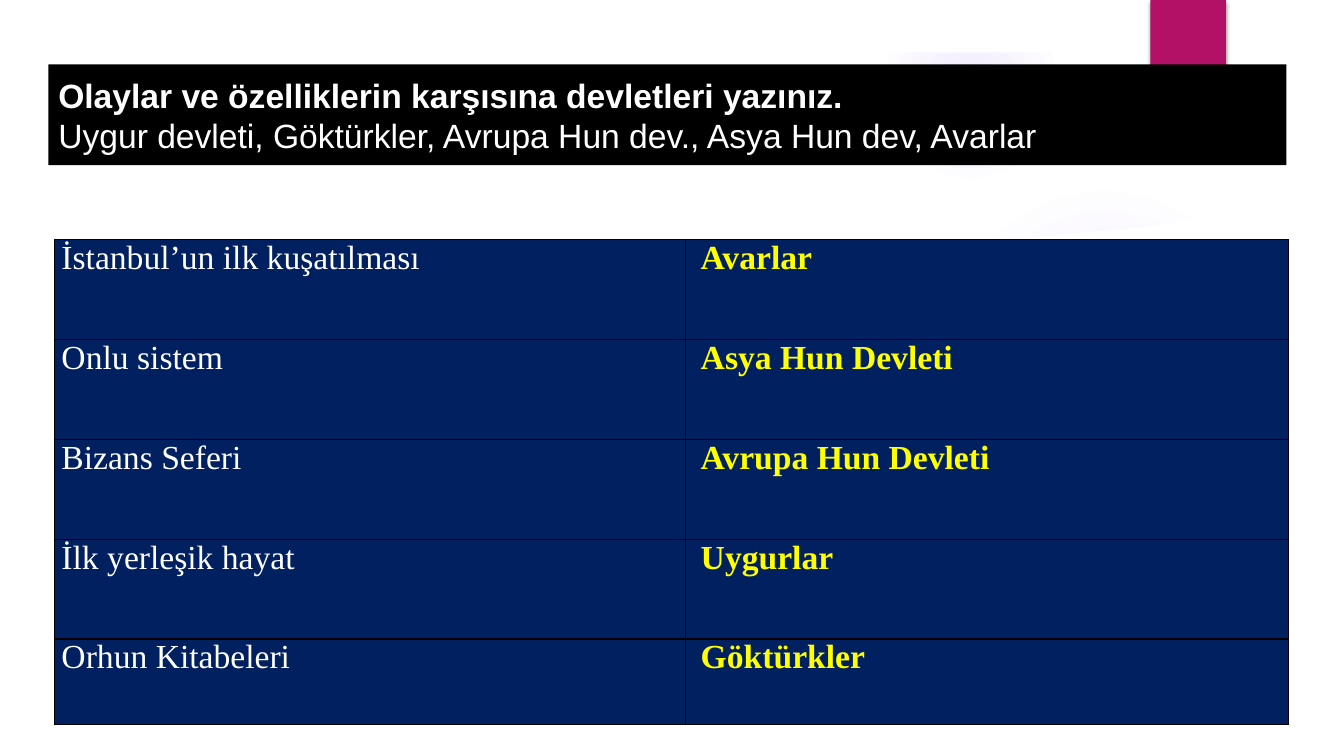
from lxml.etree import SubElement
from pptx import Presentation
from pptx.dml.color import RGBColor
from pptx.enum.shapes import MSO_SHAPE
from pptx.enum.text import MSO_ANCHOR, PP_ALIGN
from pptx.oxml import parse_xml
from pptx.oxml.ns import nsdecls, qn
from pptx.util import Inches, Pt

WHITE, BLACK, NAVY, YELLOW = "FFFFFF", "000000", "002060", "FFFF00"
MAGENTA, VIOLET = "B31166", "9B6BF2"
GLOWS = [
    ((9.41, 1.83, 3.08, 3.08), [(0, 7), (36, 6), (69, 0)]),
    ((8.75, 0.01, 1.75, 1.75), [(0, 14), (36, 7), (73, 0)]),
]
PANEL_EDGE = [(12.84, 2.04), (12, 2.17), (11.16, 2.27), (10.32, 2.35), (9.49, 2.41),
              (8.4, 2.46), (7.08, 2.48), (5.83, 2.46), (4.44, 2.41), (3.21, 2.33),
              (2.16, 2.24), (1.35, 2.15), (0.5, 2.04)]
TITLE_LINES = [
    ("Olaylar ve özelliklerin karşısına devletleri yazınız.", True),
    ("Uygur devleti, Göktürkler, Avrupa Hun dev., Asya Hun dev, Avarlar", False),
]
ANSWERS = [
    ("İstanbul’un ilk kuşatılması", "Avarlar"),
    ("Onlu sistem", "Asya Hun Devleti"),
    ("Bizans Seferi", "Avrupa Hun Devleti"),
    ("İlk yerleşik hayat", "Uygurlar"),
    ("Orhun Kitabeleri", "Göktürkler"),
]


def color(value):
    return RGBColor.from_string(value)


def paint(shape, fill):
    shape.shadow.inherit = False
    shape.line.fill.background()
    shape.fill.solid()
    shape.fill.fore_color.rgb = color(fill)
    return shape


def add_block(page, kind, box, fill):
    return paint(page.shapes.add_shape(kind, *map(Inches, box)), fill)


def style(paragraph, name, fill, bold):
    paragraph.alignment = PP_ALIGN.LEFT
    paragraph.font.name = name
    paragraph.font.size = Pt(24)
    paragraph.font.bold = bold
    paragraph.font.color.rgb = color(fill)


def add_glow(page, box, stops):
    glow = add_block(page, MSO_SHAPE.OVAL, box, VIOLET)
    marks = "".join(
        f'<a:gs pos="{place * 1000}"><a:srgbClr val="{VIOLET}">'
        f'<a:alpha val="{alpha * 1000}"/></a:srgbClr></a:gs>'
        for place, alpha in stops)
    gradient = parse_xml(
        f'<a:gradFill {nsdecls("a")}><a:gsLst>{marks}</a:gsLst><a:path path="circle">'
        '<a:fillToRect l="50000" t="50000" r="50000" b="50000"/></a:path></a:gradFill>')
    properties = glow._element.spPr
    properties.replace(properties.find(qn("a:solidFill")), gradient)


def add_backdrop(page, width):
    for box, stops in GLOWS:
        add_glow(page, box, stops)
    outline = page.shapes.build_freeform(Inches(0.5), Inches(7), scale=1.0)
    corners = [(12.84, 7)] + PANEL_EDGE
    outline.add_line_segments([(Inches(x), Inches(y)) for x, y in corners])
    paint(outline.convert_to_shape(), WHITE)
    add_block(page, MSO_SHAPE.RECTANGLE, (0, 0, width, 0.52), WHITE)


def add_ribbon(page, box):
    ribbon = add_block(page, MSO_SHAPE.RECTANGLE, box, MAGENTA)
    effects = ribbon._element.spPr.find(qn("a:effectLst"))
    shadow = SubElement(effects, qn("a:outerShdw"), blurRad=str(Pt(3)), dist=str(Pt(2)),
                        dir="5400000", rotWithShape="0")
    tone = SubElement(shadow, qn("a:srgbClr"), val=BLACK)
    SubElement(tone, qn("a:alpha"), val="45000")


def add_title(page, box):
    frame = add_block(page, MSO_SHAPE.RECTANGLE, box, BLACK).text_frame
    frame.word_wrap = True
    frame.vertical_anchor = MSO_ANCHOR.MIDDLE
    for index, (text, bold) in enumerate(TITLE_LINES):
        paragraph = frame.add_paragraph() if index else frame.paragraphs[0]
        paragraph.text = text
        style(paragraph, "Arial", WHITE, bold)


def fill_cell(cell, text, ink, bold, indent):
    cell.margin_left, cell.margin_right = Inches(indent), Inches(0.07)
    cell.margin_top = cell.margin_bottom = 0
    cell.text = text
    style(cell.text_frame.paragraphs[0], "Times New Roman", ink, bold)
    properties = cell._tc.get_or_add_tcPr()
    for side in ("lnL", "lnR", "lnT", "lnB"):
        properties.append(parse_xml(
            f'<a:{side} {nsdecls("a")} w="{Pt(1)}"><a:solidFill>'
            f'<a:srgbClr val="{BLACK}"/></a:solidFill></a:{side}>'))
    cell.fill.solid()
    cell.fill.fore_color.rgb = color(NAVY)


def add_answers(page, box):
    table = page.shapes.add_table(len(ANSWERS), 2, *map(Inches, box)).table
    table.first_row = table.horz_banding = False
    for column, width in zip(table.columns, (6.26, 5.98)):
        column.width = Inches(width)
    for index, (event, state) in enumerate(ANSWERS):
        table.rows[index].height = Inches(0.85 if index == len(ANSWERS) - 1 else 0.99)
        fill_cell(table.cell(index, 0), event, WHITE, False, 0.07)
        fill_cell(table.cell(index, 1), state, YELLOW, True, 0.15)


def main():
    deck = Presentation()
    deck.slide_width, deck.slide_height = Inches(13.33), Inches(7.5)
    page = deck.slides.add_slide(deck.slide_layouts[6])
    add_backdrop(page, 13.33)
    add_ribbon(page, (11.41, 0, 0.75, 1.25))
    add_title(page, (0.48, 0.64, 12.28, 1))
    add_answers(page, (0.54, 2.38, 12.24, 4.8))
    deck.save("out.pptx")


if __name__ == "__main__":
    main()
